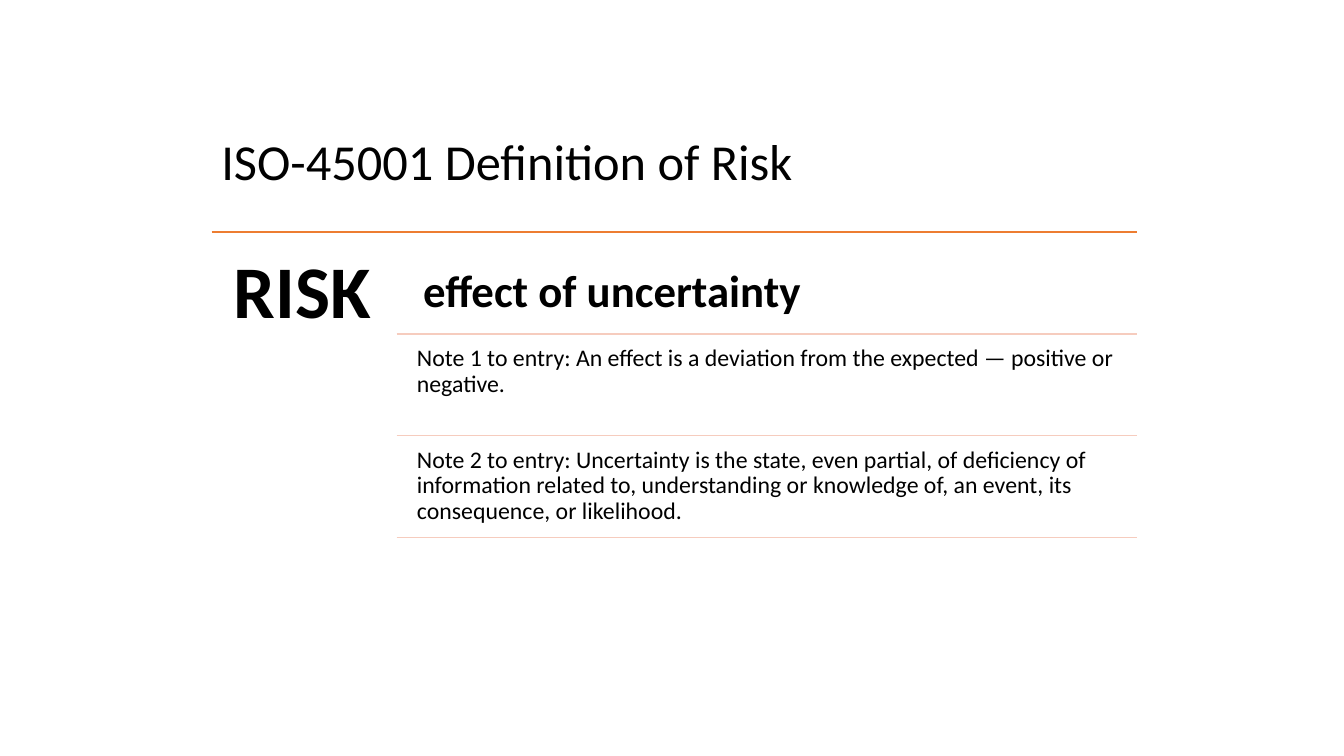
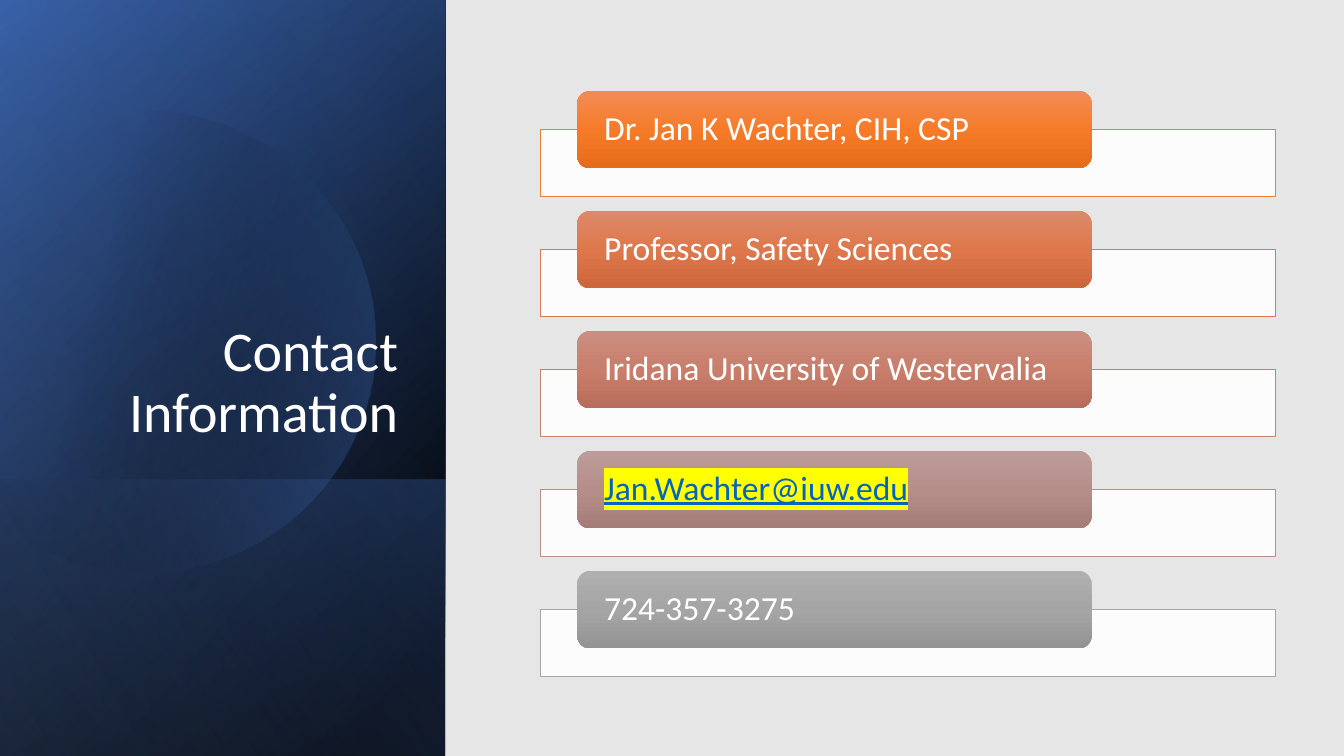
from math import acos, cos, pi, sin

from pptx import Presentation
from pptx.dml.color import RGBColor
from pptx.enum.shapes import MSO_CONNECTOR, MSO_SHAPE
from pptx.enum.text import MSO_ANCHOR, PP_ALIGN
from pptx.oxml import parse_xml
from pptx.oxml.ns import nsdecls, qn
from pptx.util import Pt

FONT = "Calibri"
COLOURS = {
    "white": "FFFFFF", "black": "000000", "page grey": "E7E6E6",
    "orange": "ED7D31", "pale rule": "F6CCBE",
    "navy": "2F5597", "blue": "4472C4", "sky": "8FAADC",
    "link": "0563C1", "marker": "FFFF00",
}


def rgb(name):
    return RGBColor.from_string(COLOURS[name])


# Fills
def colour_xml(value, opacity=100):
    return (f'<a:srgbClr val="{value}">'
            f'<a:alpha val="{opacity * 1000}"/></a:srgbClr>')


def put_fill(shape, xml):
    shape.fill.background()
    old = shape._element.spPr.find(qn("a:noFill"))
    old.getparent().replace(old, parse_xml(xml))


def fill_solid(shape, value, opacity):
    put_fill(shape, f'<a:solidFill {nsdecls("a")}>'
                    f'{colour_xml(value, opacity)}</a:solidFill>')


def fill_gradient(shape, stops, angle):
    """Each stop is (percent, hex colour, opacity)."""
    marks = "".join(f'<a:gs pos="{place * 1000}">{colour_xml(value, opacity)}</a:gs>'
                    for place, value, opacity in stops)
    put_fill(shape, f'<a:gradFill {nsdecls("a")} rotWithShape="1">'
                    f'<a:gsLst>{marks}</a:gsLst>'
                    f'<a:lin ang="{angle * 60000}" scaled="0"/></a:gradFill>')


# Text, shapes and lines
def write(shape, text, size, colour="black", bold=False, anchor=MSO_ANCHOR.TOP,
          align=PP_ALIGN.LEFT, inset=(7.2, 3.6), wrap=True):
    frame = shape.text_frame
    frame.word_wrap = wrap
    frame.vertical_anchor = anchor
    frame.margin_left = frame.margin_right = Pt(inset[0])
    frame.margin_top = frame.margin_bottom = Pt(inset[1])
    para = frame.paragraphs[0]
    para.alignment = align
    para.line_spacing = 0.9
    span = para.add_run()
    span.text = text
    span.font.name = FONT
    span.font.size = Pt(size)
    span.font.bold = bold
    span.font.color.rgb = rgb(colour)
    return span


def add_text(page, box, text, size, **style):
    shape = page.shapes.add_textbox(*map(Pt, box))
    return write(shape, text, size, **style)


def add_title(page, box, text, size, **style):
    add_text(page, box, text, size, anchor=MSO_ANCHOR.BOTTOM, **style)


def add_block(page, kind, box):
    shape = page.shapes.add_shape(kind, *map(Pt, box))
    shape.shadow.inherit = False
    shape.line.fill.background()
    return shape


def add_rule(page, left, right, top, colour):
    rule = page.shapes.add_connector(
        MSO_CONNECTOR.STRAIGHT, Pt(left), Pt(top), Pt(right), Pt(top))
    rule.line.color.rgb = rgb(colour)
    rule.line.width = Pt(1)
    rule._element.spPr.append(parse_xml(f'<a:effectLst {nsdecls("a")}/>'))


def add_page(deck, background):
    page = deck.slides.add_slide(deck.slide_layouts[6])
    page.background.fill.solid()
    page.background.fill.fore_color.rgb = rgb(background)
    return page


# Definition slide: a term on the left, ruled rows on the right
def definition_table(page, box, term, meaning, notes):
    left, top, width, height = box
    right = left + width
    row_height = height / (len(notes) + 1)
    rows_left = left + width * 0.2
    text_left = rows_left + 9.4
    text_width = right - text_left

    add_rule(page, left, right, top, "orange")
    add_text(page, (left, top, rows_left - left, height), term, 53,
             bold=True, inset=(15.8, 15.8), wrap=False)
    add_text(page, (text_left, top + 17, text_width, 69), meaning, 32,
             bold=True, inset=(9.4, 9.4))
    for index, note in enumerate(notes, 1):
        row_top = top + index * row_height
        add_rule(page, rows_left, right, row_top, "pale rule")
        add_text(page, (text_left, row_top + 3.6, text_width, 69), note, 17,
                 inset=(5, 5))
    add_rule(page, rows_left, right, top + height, "pale rule")


def definition_slide(deck):
    page = add_page(deck, "white")
    add_title(page, (151, 34.6, 661, 105.8), "ISO-45001 Definition of Risk", 36)
    definition_table(
        page, (151.2, 165.8, 661, 218), "RISK", "effect of uncertainty",
        ["Note 1 to entry: An effect is a deviation from the expected — "
         "positive or negative.",
         "Note 2 to entry: Uncertainty is the state, even partial, of deficiency "
         "of information related to, understanding or knowledge of, an event, "
         "its consequence, or likelihood."])


# Contact slide: a shaded side panel and a stack of labelled bars
def add_turned_layer(page, box, stops, angle):
    """Cover box with a mirrored rectangle turned by a quarter."""
    left, top, width, height = box
    shift = (height - width) / 2
    layer = add_block(page, MSO_SHAPE.RECTANGLE,
                      (left - shift, top + shift, height, width))
    layer.rotation = 90
    layer._element.spPr.xfrm.set("flipH", "1")
    fill_gradient(layer, stops, angle)


def add_cut_disc(page, left, centre_x, centre_y, radius):
    """Draw the part of a disc to the right of the left edge."""
    limit = acos((left - centre_x) / radius)
    steps = 120
    angles = [limit * (2 * step / steps - 1) for step in range(steps + 1)]
    points = [(Pt(centre_x + radius * cos(angle)), Pt(centre_y + radius * sin(angle)))
              for angle in angles]
    outline = page.shapes.build_freeform(*points[0])
    outline.add_line_segments(points[1:], close=True)
    disc = outline.convert_to_shape()
    disc.shadow.inherit = False
    disc.line.fill.background()
    fill_gradient(disc, [(29, COLOURS["black"], 0), (100, COLOURS["blue"], 43)], 14)


def side_panel(page, box, title):
    left, top, width, height = box
    black, blue = COLOURS["black"], COLOURS["blue"]
    foot = 197.3
    add_turned_layer(page, box, [(8, black, 100), (100, COLOURS["navy"], 100)], 50)
    add_turned_layer(page, box, [(0, black, 0), (99, blue, 46)], 30)
    add_turned_layer(page, (left, top + height - foot, width, foot),
                     [(2, blue, 29), (100, black, 30)], 130)
    add_cut_disc(page, left, left + 103, top + 244, 165)
    add_turned_layer(page, box, [(0, black, 0), (99, COLOURS["sky"], 11)], 120)
    add_title(page, (left + 46, top + 132.5, 245.5, 188.6), title, 40,
              colour="white", align=PP_ALIGN.RIGHT)


def contact_bar(page, box, text, edge, shades, marked):
    left, top, width, height = box
    bar = add_block(page, MSO_SHAPE.RECTANGLE, (left, top + 27.4, width, height - 27.4))
    fill_solid(bar, COLOURS["white"], 90)
    bar.line.color.rgb = RGBColor.from_string(edge)
    bar.line.width = Pt(0.5)

    label = add_block(page, MSO_SHAPE.ROUNDED_RECTANGLE,
                      (left + width * 0.05, top, width * 0.7, 55.4))
    fill_gradient(label, [(place, shade, 100)
                          for place, shade in zip((0, 50, 100), shades)], 90)
    span = write(label, text, 24, colour="link" if marked else "white",
                 anchor=MSO_ANCHOR.MIDDLE, inset=(16.6, 0))
    if marked:
        span.font.underline = True
        marker = parse_xml(f'<a:highlight {nsdecls("a")}>'
                           f'<a:srgbClr val="{COLOURS["marker"]}"/></a:highlight>')
        span.font._element.find(qn("a:solidFill")).addnext(marker)


def contact_slide(deck):
    page = add_page(deck, "page grey")
    side_panel(page, (0, 0, 318, 540), "Contact Information")
    # Text, edge colour, label shades from top to bottom
    contacts = [
        ("Dr. Jan K Wachter, CIH, CSP", COLOURS["orange"],
         ("F18C57", "F67B28", "E56C19")),
        ("Professor, Safety Sciences", "D87A51", ("DD8A6A", "DE774B", "CD673B")),
        ("Iridana University of Westervalia", "C48170",
         ("CB8F81", "C97E6B", "B76D5B")),
        ("Jan.Wachter@iuw.edu", "B4908B", ("BC9C99", "B68E89", "A47C78")),
        ("724-357-3275", "A5A5A5", ("AFAFAF", "A5A5A5", "939393")),
    ]
    for index, (text, edge, shades) in enumerate(contacts):
        contact_bar(page, (386, 64.8 + index * 85.75, 525, 75.2),
                    text, edge, shades, marked="@" in text)


def main():
    deck = Presentation()
    deck.slide_width, deck.slide_height = Pt(960), Pt(540)
    definition_slide(deck)
    contact_slide(deck)
    deck.save("out.pptx")


if __name__ == "__main__":
    main()
